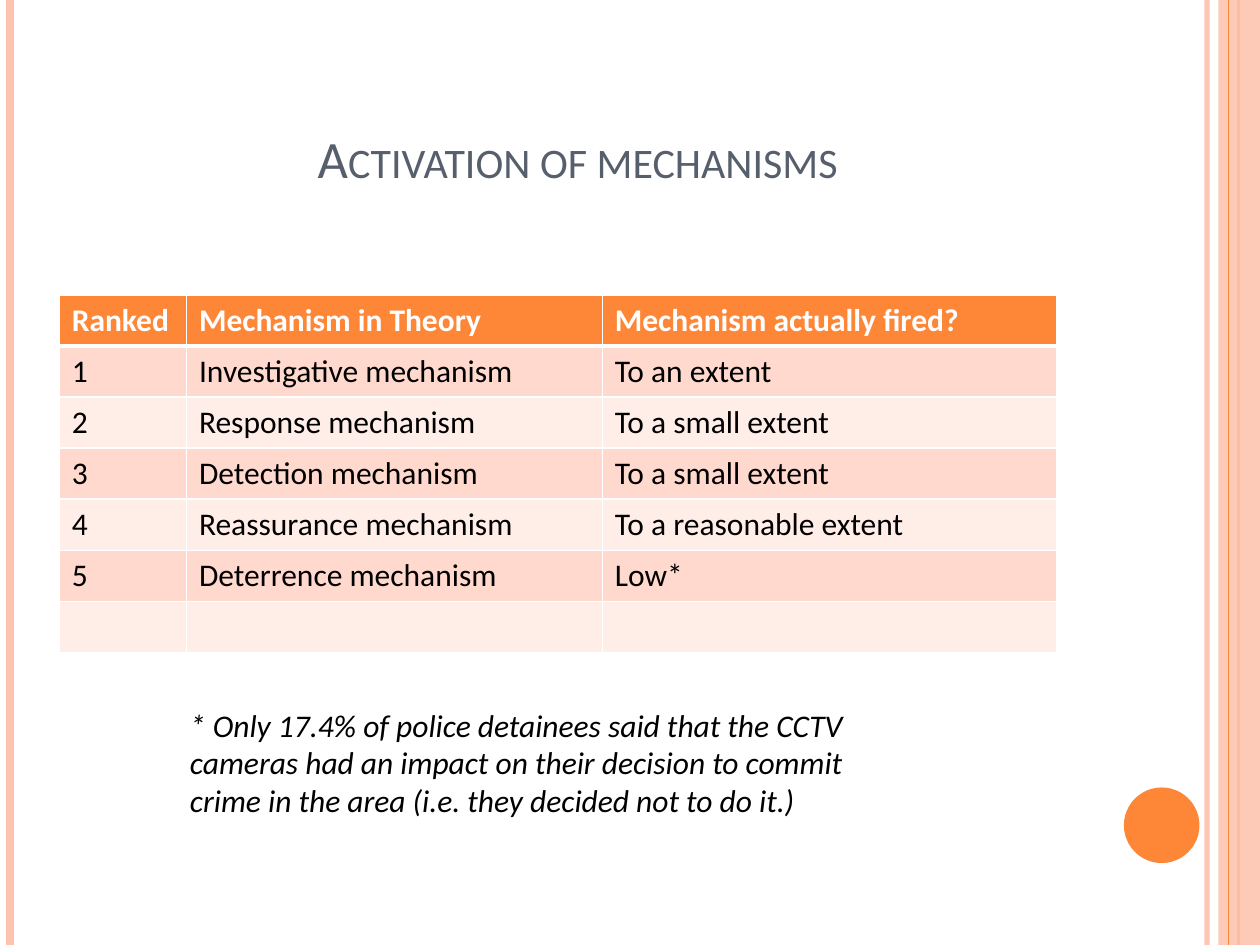
from pptx import Presentation
from pptx.dml.color import RGBColor
from pptx.enum.shapes import MSO_CONNECTOR, MSO_SHAPE
from pptx.enum.text import MSO_ANCHOR as ANCHOR, PP_ALIGN as ALIGN
from pptx.oxml.ns import qn
from pptx.util import Inches, Pt
from lxml.etree import SubElement

PEACH, ORANGE, WHITE, BLACK = "FEC3AE", "FE8637", "FFFFFF", "000000"
BANDS = ("FFD9CE", "FFEDE8")
COL_WIDTHS = (1.01, 3.3, 3.61)
ROW_HEIGHT = 2.84 / 7
ROWS = (
    ("Ranked", "Mechanism in Theory", "Mechanism actually fired?"),
    ("1", "Investigative mechanism", "To an extent"),
    ("2", "Response mechanism", "To a small extent"),
    ("3", "Detection mechanism", "To a small extent"),
    ("4", "Reassurance mechanism", "To a reasonable extent"),
    ("5", "Deterrence mechanism", "Low*"),
    ("", "", ""),
)
STRIPES = (
    (9.58, PEACH, 3, 93),
    (0.08, PEACH, 4.5, 100),
    (9.83, ORANGE, 1.5, 100),
)
NOTE = ("* Only 17.4% of police detainees said that the CCTV cameras had an impact on "
        "their decision to commit crime in the area (i.e. they decided not to do it.)")


def paint(fill, color, opacity=100):
    """Give a fill a solid colour and an opacity in percent."""
    fill.solid()
    fill.fore_color.rgb = RGBColor.from_string(color)
    if opacity < 100:
        clr = fill._xPr.find(".//" + qn("a:srgbClr"))
        SubElement(clr, qn("a:alpha"), val=str(opacity * 1000))


def add_stripe(slide, x, color, width, opacity=100):
    """Draw a vertical line over the full slide height."""
    line = slide.shapes.add_connector(
        MSO_CONNECTOR.STRAIGHT, Inches(x), 0, Inches(x), Inches(7.5))
    line.line.width = Pt(width)
    paint(line.line.fill, color, opacity)
    SubElement(line._element.spPr, qn("a:effectLst"))


def add_block(slide, kind, box, color, opacity=100):
    """Draw a filled shape without outline."""
    sp = slide.shapes.add_shape(kind, *map(Inches, box))
    sp.shadow.inherit = False
    sp.line.fill.background()
    paint(sp.fill, color, opacity)


def write(p, text, size, color, **formats):
    """Add a formatted run to a paragraph."""
    r = p.add_run()
    r.text = text
    for name, value in {"name": "Calibri", "size": Pt(size), **formats}.items():
        setattr(r.font, name, value)
    r.font.color.rgb = RGBColor.from_string(color)
    return r


def add_text(slide, box, text, size, color, anchor=ANCHOR.TOP, align=ALIGN.LEFT, **formats):
    """Add a wrapping text box and return its run."""
    tf = slide.shapes.add_textbox(*map(Inches, box)).text_frame
    tf.word_wrap = True
    tf.vertical_anchor = anchor
    p = tf.paragraphs[0]
    p.alignment = align
    return write(p, text, size, color, **formats)


def add_borders(cell, bottom):
    """Put white borders around a table cell."""
    tcPr = cell._tc.get_or_add_tcPr()
    widths = {"a:lnL": 1, "a:lnR": 1, "a:lnT": 1, "a:lnB": bottom}
    for tag, width in widths.items():
        ln = SubElement(tcPr, qn(tag), w=str(Pt(width)))
        SubElement(SubElement(ln, qn("a:solidFill")), qn("a:srgbClr"), val=WHITE)


def add_mechanism_table(slide):
    """Add the ranked table with its header and banded rows."""
    table = slide.shapes.add_table(
        len(ROWS), len(COL_WIDTHS), Inches(0.47), Inches(2.34),
        Inches(sum(COL_WIDTHS)), Inches(ROW_HEIGHT * len(ROWS))).table
    for column, width in zip(table.columns, COL_WIDTHS):
        column.width = Inches(width)
    for i, texts in enumerate(ROWS):
        header = i == 0
        table.rows[i].height = Inches(ROW_HEIGHT)
        for j, text in enumerate(texts):
            cell = table.cell(i, j)
            add_borders(cell, 3 if header else 1)
            paint(cell.fill, ORANGE if header else BANDS[(i - 1) % 2])
            if text:
                write(cell.text_frame.paragraphs[0], text, 18,
                      WHITE if header else BLACK, bold=header)


def main():
    """Build and save the slide."""
    prs = Presentation()
    prs.slide_width, prs.slide_height = Inches(10), Inches(7.5)
    slide = prs.slides.add_slide(prs.slide_layouts[6])
    for stripe in STRIPES:
        add_stripe(slide, *stripe)
    add_block(slide, MSO_SHAPE.RECTANGLE, (9.67, 0, 0.33, 7.5), PEACH, 87)
    add_stripe(slide, 9.75, ORANGE, 0.75)
    add_block(slide, MSO_SHAPE.OVAL, (8.92, 6.25, 0.6, 0.6), ORANGE)
    title = add_text(slide, (0.5, 0.3, 8.17, 1.25), "Activation of mechanisms", 30,
                     "575F6D", ANCHOR.BOTTOM, ALIGN.CENTER)
    title.font._element.set("cap", "small")
    add_mechanism_table(slide)
    add_text(slide, (1.41, 5.55, 5.86, 1.01), NOTE, 18, BLACK, italic=True)
    prs.save("out.pptx")


if __name__ == "__main__":
    main()
